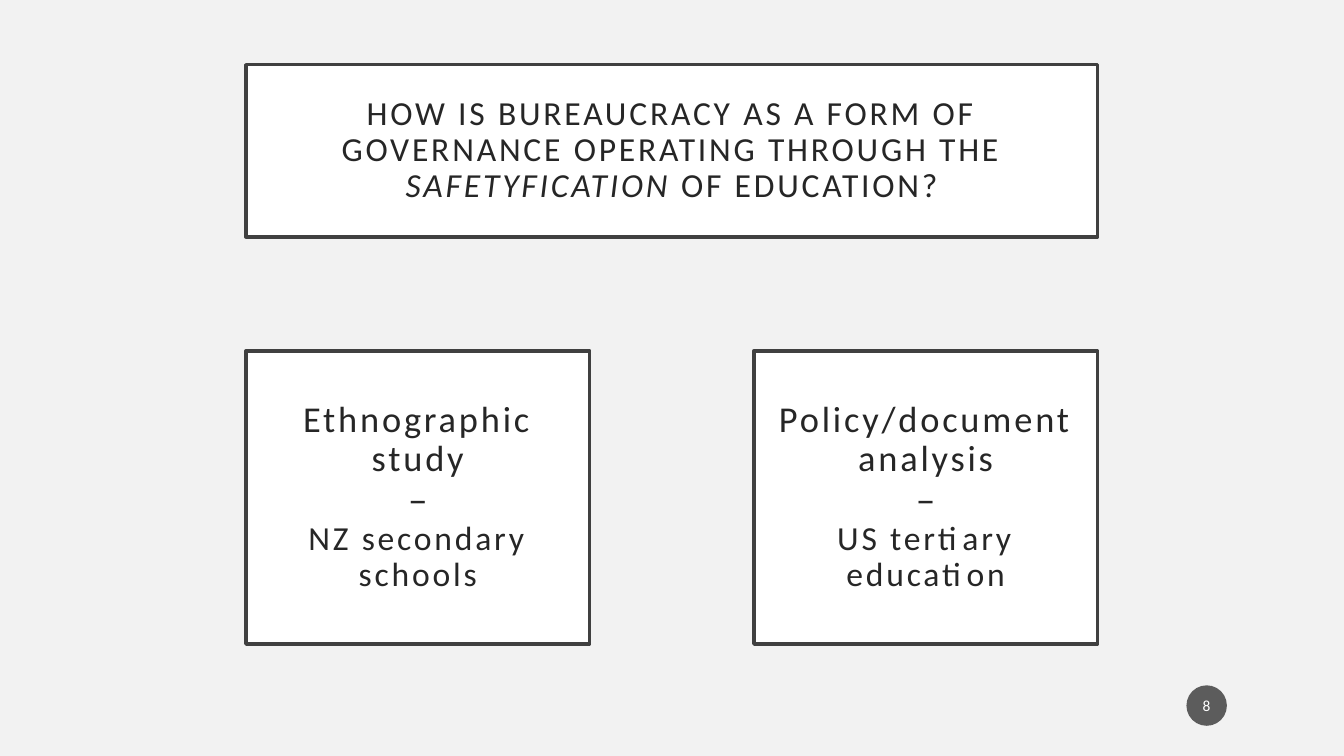
from dataclasses import dataclass

from lxml import etree
from pptx import Presentation
from pptx.dml.color import RGBColor
from pptx.enum.shapes import MSO_SHAPE
from pptx.enum.text import MSO_ANCHOR, PP_ALIGN
from pptx.oxml.ns import qn
from pptx.util import Cm, Pt

RECTANGLE = MSO_SHAPE.RECTANGLE
OVAL = MSO_SHAPE.OVAL
MIDDLE = MSO_ANCHOR.MIDDLE
CENTER = PP_ALIGN.CENTER
BLANK_LAYOUT = 6


@dataclass(frozen=True)
class Theme:
    font: str = "Calibri"
    background: str = "F2F2F2"
    panel: str = "FFFFFF"
    border: str = "404040"
    ink: str = "262626"
    badge: str = "1D1D1D"
    badge_ink: str = "FFFFFF"
    badge_opacity: int = 70
    border_width: float = 2.5
    title_size: int = 24
    method_size: int = 26
    dash_size: int = 28
    setting_size: int = 24
    number_size: int = 11
    tracking: int = 2


THEME = Theme()

# Shared frame: the title spans it, the two study boxes sit at its ends
FRAME_LEFT, FRAME_WIDTH = 6.2, 21.46
STUDY_TOP, STUDY_WIDTH, STUDY_HEIGHT = 8.84, 8.66, 7.39
STUDIES = [
    ("Ethnographic study", "NZ secondary schools"),
    ("Policy/document analysis", "US tertiary education"),
]


def color(value):
    return RGBColor.from_string(value)


def set_all(target, values):
    for name, value in values.items():
        setattr(target, name, value)


def add_figure(page, kind, bounds, fill, insets):
    """Add a flat filled shape; insets are horizontal and vertical in cm."""
    figure = page.shapes.add_shape(kind, *(Cm(length) for length in bounds))
    figure.shadow.inherit = False
    figure.fill.solid()
    figure.fill.fore_color.rgb = color(fill)
    across, down = (Cm(inset) for inset in insets)
    set_all(figure.text_frame, {
        "word_wrap": True, "vertical_anchor": MIDDLE,
        "margin_left": across, "margin_right": across,
        "margin_top": down, "margin_bottom": down,
    })
    return figure


def write(para, text, size, ink, italic=False, tracking=0):
    span = para.add_run()
    span.text = text
    set_all(span.font, {"name": THEME.font, "size": Pt(size), "italic": italic})
    span.font.color.rgb = color(ink)
    if tracking:
        span.font._element.set("spc", str(tracking * 100))


def add_panel(page, bounds, lines):
    """Add a bordered box; each line is a list of (text, size, italic) spans."""
    panel = add_figure(page, RECTANGLE, bounds, THEME.panel, (0.51, 0.51))
    panel.line.color.rgb = color(THEME.border)
    panel.line.width = Pt(THEME.border_width)
    frame = panel.text_frame
    for index, spans in enumerate(lines):
        para = frame.add_paragraph() if index else frame.paragraphs[0]
        set_all(para, {"alignment": CENTER, "line_spacing": 0.9})
        for text, size, italic in spans:
            write(para, text, size, THEME.ink, italic, THEME.tracking)


def add_page_number(page, number):
    badge = add_figure(page, OVAL, (29.9, 17.27, 1.02, 1.02), THEME.badge, (0.05, 0.13))
    badge.line.fill.background()
    fill_color = badge._element.spPr.find(qn("a:solidFill"))[0]
    alpha = etree.SubElement(fill_color, qn("a:alpha"))
    alpha.set("val", str(THEME.badge_opacity * 1000))
    para = badge.text_frame.paragraphs[0]
    para.alignment = CENTER
    write(para, number, THEME.number_size, THEME.badge_ink)


def main():
    deck = Presentation()
    set_all(deck, {"slide_width": Cm(33.87), "slide_height": Cm(19.05)})
    page = deck.slides.add_slide(deck.slide_layouts[BLANK_LAYOUT])
    page.background.fill.solid()
    page.background.fill.fore_color.rgb = color(THEME.background)

    # Research question
    add_panel(page, (FRAME_LEFT, 1.63, FRAME_WIDTH, 4.34), [[
        ("HOW IS BUREAUCRACY AS A FORM OF GOVERNANCE OPERATING THROUGH THE ",
         THEME.title_size, False),
        ("SAFETYFICATION", THEME.title_size, True),
        (" OF EDUCATION?", THEME.title_size, False),
    ]])

    # Two studies
    step = FRAME_WIDTH - STUDY_WIDTH
    for index, (method, setting) in enumerate(STUDIES):
        left = FRAME_LEFT + index * step
        add_panel(page, (left, STUDY_TOP, STUDY_WIDTH, STUDY_HEIGHT), [
            [(method, THEME.method_size, False)],
            [("–", THEME.dash_size, False)],
            [(setting, THEME.setting_size, False)],
        ])

    # Page number
    add_page_number(page, "8")
    deck.save("out.pptx")


if __name__ == "__main__":
    main()
